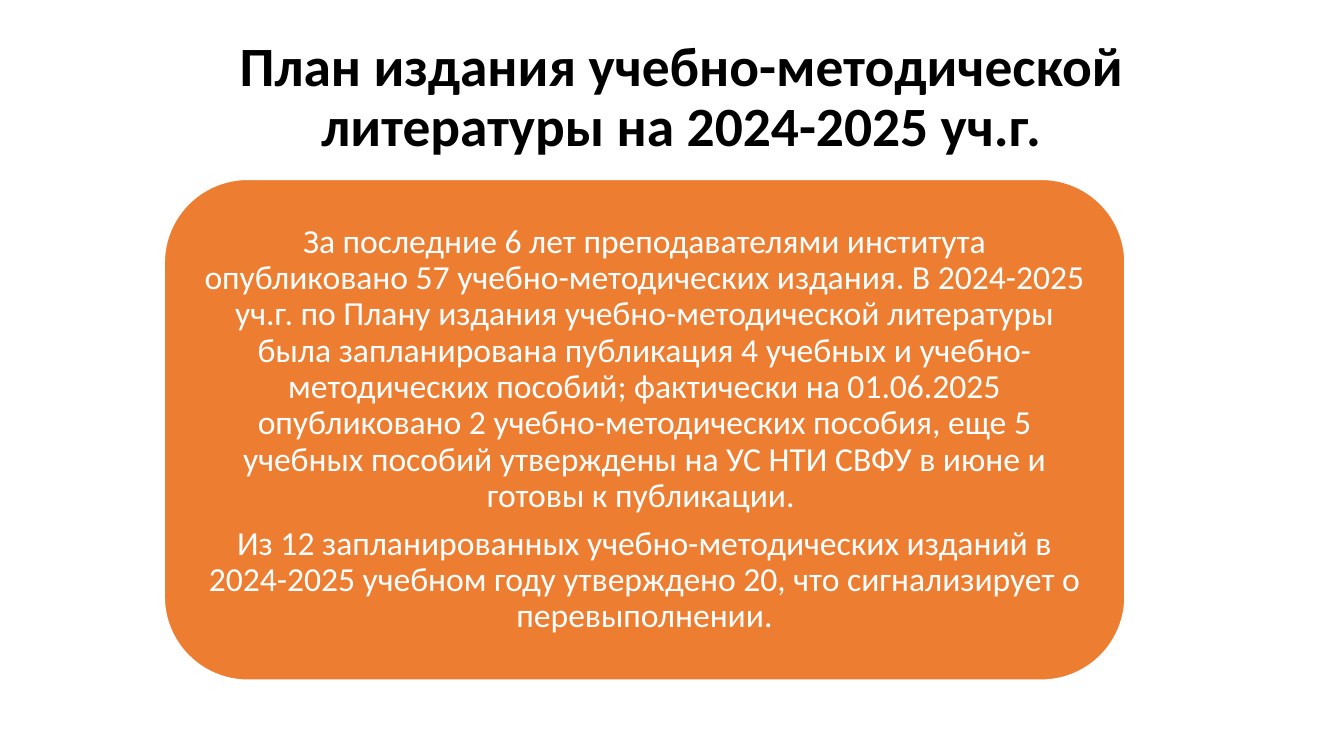
from pptx import Presentation
from pptx.dml.color import RGBColor
from pptx.enum.shapes import MSO_SHAPE
from pptx.enum.text import MSO_ANCHOR, MSO_AUTO_SIZE, PP_ALIGN
from pptx.text.text import TextFrame
from pptx.util import Cm, Pt

ORANGE = RGBColor(0xED, 0x7D, 0x31)
WHITE = RGBColor(0xFF, 0xFF, 0xFF)
BLACK = RGBColor(0x00, 0x00, 0x00)

HEADING = "План издания учебно-методической литературы на 2024-2025 уч.г."
SUMMARY = (
    "За последние 6 лет преподавателями института опубликовано 57 "
    "учебно-методических издания. В 2024-2025 уч.г. по Плану издания "
    "учебно-методической литературы была запланирована публикация 4 учебных "
    "и учебно-методических пособий; фактически на 01.06.2025 опубликовано 2 "
    "учебно-методических пособия, еще 5 учебных пособий утверждены на УС НТИ "
    "СВФУ в июне и готовы к публикации. ",
    "Из 12 запланированных учебно-методических изданий в 2024-2025 учебном "
    "году утверждено 20, что сигнализирует о перевыполнении.",
)


def write_centred(frame: TextFrame, paragraphs: tuple[str, ...], size: float,
                  color: RGBColor, bold: bool = False, space_after: float = 0) -> None:
    frame.text = "\n".join(paragraphs)
    frame.word_wrap = True
    frame.auto_size = MSO_AUTO_SIZE.NONE
    frame.vertical_anchor = MSO_ANCHOR.MIDDLE
    frame.margin_left = frame.margin_right = Cm(0.25)
    frame.margin_top = frame.margin_bottom = Cm(0.25)
    for paragraph in frame.paragraphs:
        paragraph.alignment = PP_ALIGN.CENTER
        paragraph.line_spacing = 0.9
        paragraph.space_before = Pt(0)
        paragraph.space_after = Pt(space_after)
        for run in paragraph.runs:
            run.font.name = "Calibri"
            run.font.size = Pt(size)
            run.font.bold = bold
            run.font.color.rgb = color


def main() -> None:
    presentation = Presentation()
    presentation.slide_width = Cm(33.87)
    presentation.slide_height = Cm(19.05)
    slide = presentation.slides.add_slide(presentation.slide_layouts[5])

    heading = slide.shapes.title
    heading.left, heading.top = Cm(2.57), Cm(1.6)
    heading.width, heading.height = Cm(29.21), Cm(1.75)
    write_centred(heading.text_frame, (HEADING,), 39.6, BLACK, bold=True)

    summary = slide.shapes.add_shape(
        MSO_SHAPE.ROUNDED_RECTANGLE, Cm(4.14), Cm(4.52), Cm(24.21), Cm(12.62))
    summary.shadow.inherit = False
    summary.fill.solid()
    summary.fill.fore_color.rgb = ORANGE
    summary.line.color.rgb = WHITE
    summary.line.width = Pt(1)
    write_centred(summary.text_frame, SUMMARY, 24, WHITE, space_after=8.4)

    presentation.save("out.pptx")


if __name__ == "__main__":
    main()
